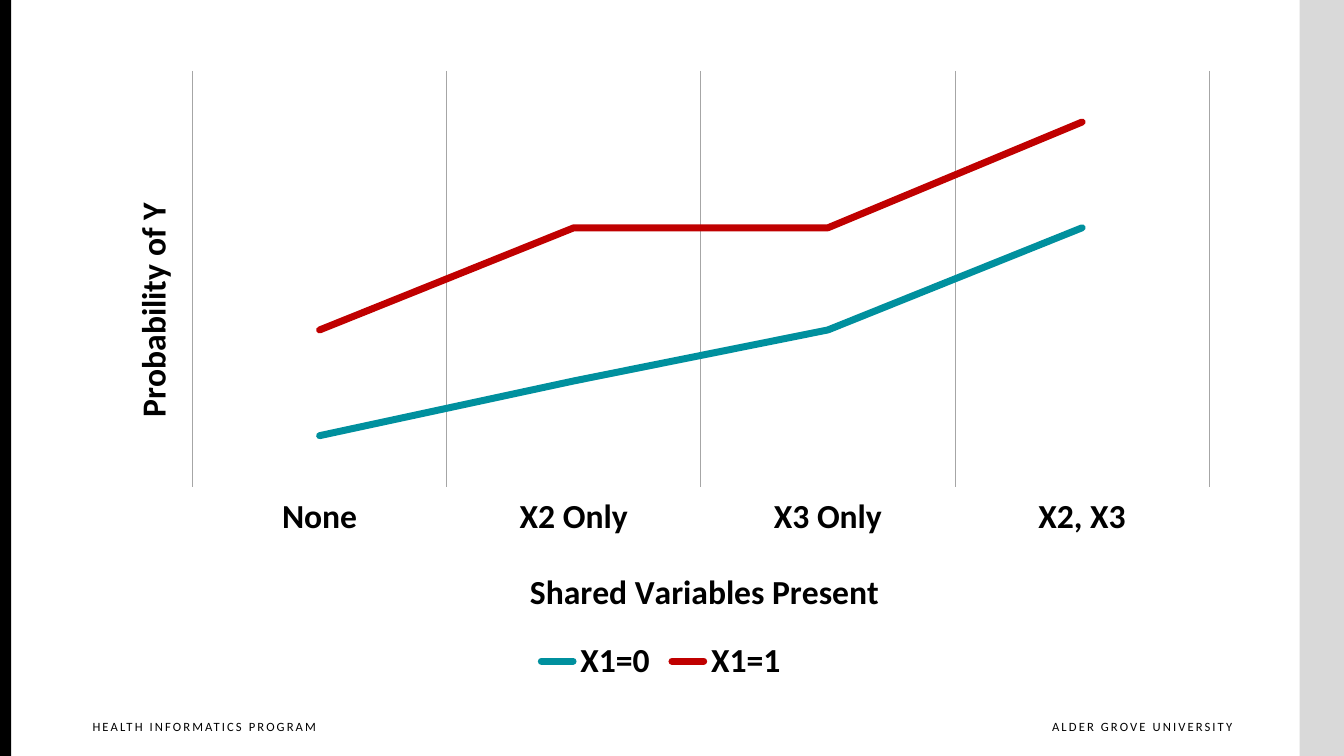
"""Build a slide with a line chart of probability by shared variables present."""
from dataclasses import dataclass

from lxml import etree
from pptx import Presentation
from pptx.chart.data import CategoryChartData
from pptx.dml.color import RGBColor
from pptx.enum.chart import XL_CHART_TYPE as ChartType
from pptx.enum.chart import XL_LEGEND_POSITION as LegendPosition
from pptx.enum.chart import XL_TICK_LABEL_POSITION as LabelPosition
from pptx.enum.chart import XL_TICK_MARK as TickMark
from pptx.enum.shapes import MSO_SHAPE as Preset
from pptx.enum.text import PP_ALIGN as Align
from pptx.oxml.ns import qn
from pptx.util import Inches, Pt


@dataclass(frozen=True)
class Theme:
    font: str = "Calibri"
    black: RGBColor = RGBColor.from_string("000000")
    band: RGBColor = RGBColor.from_string("D9D9D9")
    grid: RGBColor = RGBColor.from_string("A6A6A6")
    teal: RGBColor = RGBColor.from_string("00909E")
    red: RGBColor = RGBColor.from_string("C00000")
    footer_size: int = 9
    chart_size: int = 24


theme = Theme()


def write(frame, text, size=theme.footer_size, bold=False, align=None, spacing=None):
    paragraph = frame.paragraphs[0]
    paragraph.alignment = align
    run = paragraph.add_run()
    run.text = text
    run.font.name, run.font.size, run.font.bold = theme.font, Pt(size), bold
    run.font.color.rgb = theme.black
    if spacing:
        run.font._element.set("spc", str(spacing))


def place(parent, index, **fractions):
    for old in parent.findall(qn("c:layout")):
        parent.remove(old)
    layout = etree.Element(qn("c:layout"))
    manual = etree.SubElement(layout, qn("c:manualLayout"))
    for name, value in fractions.items():
        etree.SubElement(manual, qn(f"c:{name}")).set("val", str(value))
    parent.insert(index, layout)


presentation = Presentation()
presentation.slide_width, presentation.slide_height = Inches(13.33), Inches(7.5)
slide = presentation.slides.add_slide(presentation.slide_layouts[6])

for left, width, color in ((12.89, 0.44, theme.band), (0, 0.11, theme.black)):
    band = slide.shapes.add_shape(
        Preset.RECTANGLE, Inches(left), 0, Inches(width), presentation.slide_height)
    band.shadow.inherit = False
    band.fill.solid()
    band.fill.fore_color.rgb = color
    band.line.fill.background()

footers = (
    (9.87, 2.35, "ALDER GROVE UNIVERSITY", Align.RIGHT),
    (0.82, 2.54, "HEALTH INFORMATICS PROGRAM", Align.LEFT),
)
for left, width, text, align in footers:
    footer = slide.shapes.add_textbox(Inches(left), Inches(7.08), Inches(width), Inches(0.33))
    footer.text_frame.word_wrap = True
    footer.text_frame.margin_right = 0
    write(footer.text_frame, text, align=align, spacing=150)

data = CategoryChartData()
data.categories = ["None", "X2 Only", "X3 Only", "X2, X3"]
data.add_series("X1=0", (14, 29, 43, 71))
data.add_series("X1=1", (43, 71, 71, 100))
chart = slide.shapes.add_chart(
    ChartType.LINE, Inches(0.89), Inches(0.58), Inches(11.33), Inches(6.25), data).chart
chart.has_title = False
chart.font.name, chart.font.size, chart.font.bold = theme.font, Pt(theme.chart_size), True
chart.font.color.rgb = theme.black
chart.has_legend = True
chart.legend.position = LegendPosition.BOTTOM
chart.legend.include_in_layout = False

plot = chart.plots[0]
plot.vary_by_categories = False
for series, color in zip(plot.series, (theme.teal, theme.red)):
    series.smooth = False
    line = series.format.line
    line.width = Pt(5)
    line.color.rgb = color
    series._element.find(".//" + qn("a:ln")).set("cap", "rnd")

category_axis, value_axis = chart.category_axis, chart.value_axis
category_axis.tick_label_position = LabelPosition.LOW
category_axis.has_major_gridlines = True
category_axis.major_gridlines.format.line.color.rgb = theme.grid
category_axis.major_gridlines.format.line.width = Pt(0.75)
value_axis.tick_label_position = LabelPosition.NONE
value_axis.has_major_gridlines = False
value_axis.minimum_scale, value_axis.maximum_scale = 0, 114

titles = (
    (category_axis, "Shared Variables Present", 0, 0.38, 0.8),
    (value_axis, "Probability of Y", -5400000, 0.03, 0.22),
)
for axis, text, rotation, x, y in titles:
    axis.major_tick_mark = axis.minor_tick_mark = TickMark.NONE
    axis.format.line.fill.background()
    title = axis.axis_title
    write(title.text_frame, text, size=theme.chart_size, bold=True)
    body = title._element.find(".//" + qn("a:bodyPr"))
    body.set("rot", str(rotation))
    body.set("vert", "horz")
    place(title._element, 1, xMode="edge", yMode="edge", x=x, y=y)

plot_area = chart._chartSpace.find(".//" + qn("c:plotArea"))
place(plot_area, 0, layoutTarget="inner", xMode="edge", yMode="edge",
      x=0.09, y=0.02, w=0.89, h=0.66)

presentation.save("out.pptx")
